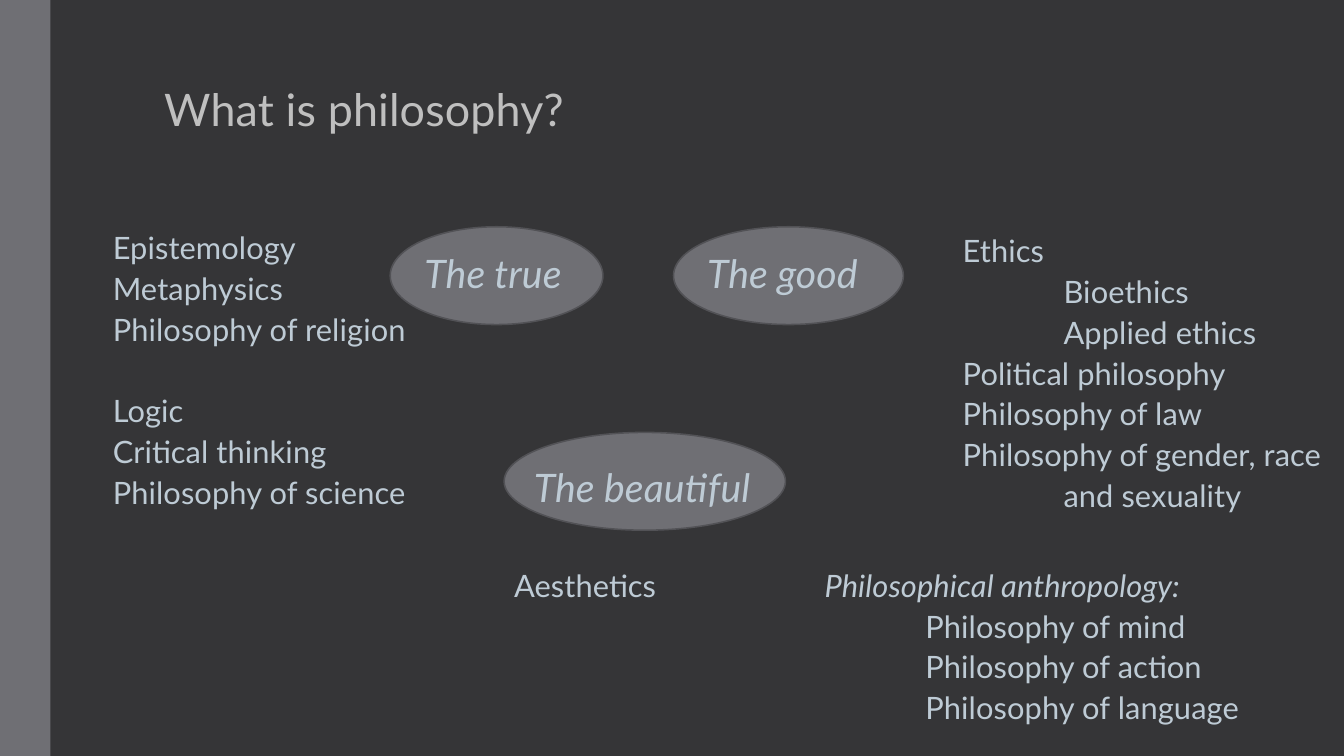
from pptx import Presentation
from pptx import util as u
from pptx.dml.color import RGBColor
from pptx.enum import shapes, text

BACKGROUND = RGBColor(0x35, 0x35, 0x37)
GREY = RGBColor(0x6F, 0x6F, 0x74)
OUTLINE = RGBColor(0x52, 0x52, 0x56)
TITLE_COLOR = RGBColor(0xBF, 0xBF, 0xBF)
TEXT_COLOR = RGBColor(0xBE, 0xCB, 0xD5)

deck = Presentation()
deck.slide_width = u.Inches(13.33)
deck.slide_height = u.Inches(7.5)
page = deck.slides.add_slide(deck.slide_layouts[6])
page.background.fill.solid()
page.background.fill.fore_color.rgb = BACKGROUND


def add_filled(kind, left, top, width, height):
    shape = page.shapes.add_shape(
        kind, u.Inches(left), u.Inches(top), u.Inches(width), u.Inches(height))
    shape.shadow.inherit = False
    shape.fill.solid()
    shape.fill.fore_color.rgb = GREY
    shape.line.fill.background()
    return shape


def add_text(left, top, width, height, lines, size, color=TEXT_COLOR, before=2):
    box = page.shapes.add_textbox(
        u.Inches(left), u.Inches(top), u.Inches(width), u.Inches(height))
    frame = box.text_frame
    frame.word_wrap = True
    frame.text = "\n".join(lines)
    for para in frame.paragraphs:
        para.line_spacing = 0.95
        para.space_before = u.Pt(before)
        para.space_after = u.Pt(2)
        for span in para.runs:
            span.font.name = "Lato"
            span.font.size = u.Pt(size)
            span.font.color.rgb = color
            span._r.get_or_add_rPr().set("spc", "10")
    return frame.paragraphs


add_filled(shapes.MSO_SHAPE.RECTANGLE, 0, 0, 0.5, 7.5)

ideals = [
    ("The beautiful", (5, 4.29, 2.79), (4.23, 4.58)),
    ("The good", (6.68, 2.25, 2.28), (5.62, 2.46)),
    ("The true", (3.87, 2.25, 2.11), (2.75, 2.46)),
]
for label, (left, top, width), label_place in ideals:
    ellipse = add_filled(shapes.MSO_SHAPE.OVAL, left, top, width, 0.97)
    ellipse.line.color.rgb = OUTLINE
    ellipse.line.width = u.Pt(1.1)

add_text(1.53, 0.8, 10.3, 5.56, ["What is philosophy?"], 32, TITLE_COLOR, 14)

for label, ellipse_place, (left, top) in reversed(ideals):
    para = add_text(left, top, 4.28, 1.35, [label], 28, before=14)[0]
    para.alignment = text.PP_ALIGN.CENTER
    para.runs[0].font.italic = True

truth = add_text(1.02, 2.25, 4.28, 4.08, [
    "Epistemology", "Metaphysics", "Philosophy of religion",
    "Logic", "Critical thinking", "Philosophy of science"], 22)
truth[3].space_before = u.Pt(31)

goodness = add_text(9.45, 2.28, 4.28, 4.08, [
    "Ethics", "Bioethics", "Applied ethics", "Political philosophy",
    "Philosophy of law", "Philosophy of gender, race", "and sexuality"], 22)

add_text(5, 5.6, 4.28, 4.08, ["Aesthetics"], 22)

anthropology = add_text(8.08, 5.6, 5.41, 4.08, [
    "Philosophical anthropology:", "Philosophy of mind",
    "Philosophy of action", "Philosophy of language"], 22)
anthropology[0].runs[0].font.italic = True

for para in (*goodness[1:3], goodness[6], *anthropology[1:]):
    para._p.get_or_add_pPr().set("marL", str(u.Inches(1)))

deck.save("out.pptx")
